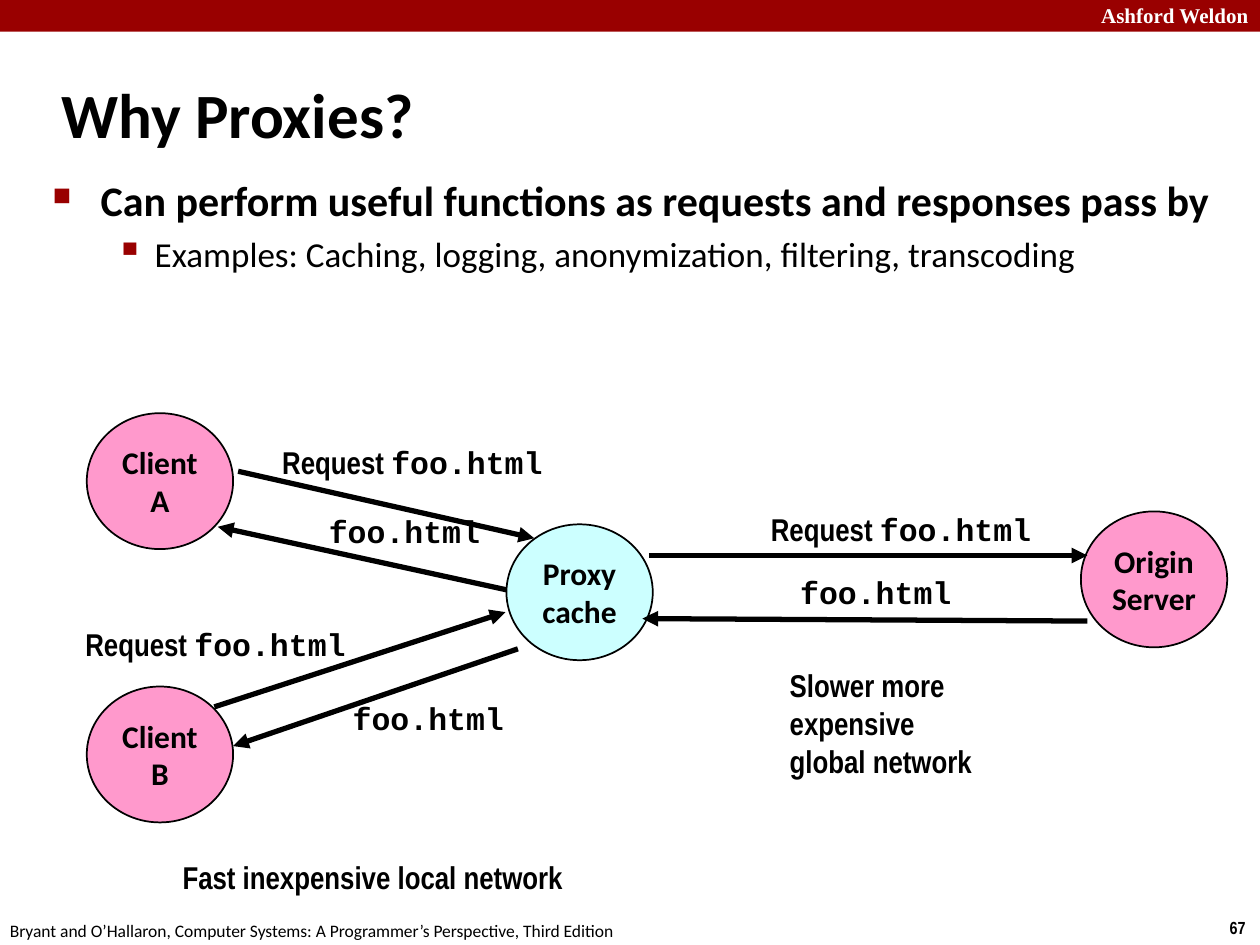
"""Build the slide on what proxies are for."""
from lxml import etree
from pptx import Presentation, util as u
from pptx.dml.color import RGBColor
from pptx.enum import shapes, text
from pptx.oxml.ns import qn

HUE = {"red": "990000", "pink": "FF99CC", "cyan": "CCFFFF", "ink": "000000", "white": "FFFFFF"}
SANS, SLIM, MONO, SERIF = "Calibri", "Arial Narrow", "Courier New", "Times New Roman"
FILE = ("foo.html", MONO)
ASK = [("Request ", SLIM), FILE]
REPLY = [FILE]

BAR = (0, 0, 25.4, 0.64)
FRAME = [
    ("Ashford Weldon", (21.95, -0.08, 3.63, 0.76), SERIF, 12, True, "white", True),
    ("67", (24.54, 18.36, 0.86, 0.69), SLIM, 10, True, "ink", False),
    ("Bryant and O’Hallaron, Computer Systems: A Programmer’s Perspective, Third Edition",
     (-0.05, 18.42, 12.9, 0.69), SANS, 10, False, "ink", False),
]
TITLE = ("Why Proxies?", (0.99, 1.22, 21.08, 2.11))
BODY = (0.81, 3.4, 23.95, 4.6)
POINTS = [
    ("Can perform useful functions as requests and responses pass by",
     24, True, 0.97, 0.97, "■", 60),
    ("Examples: Caching, logging, anonymization, filtering, transcoding",
     20, False, 2.06, 0.79, "▪", 110),
]
NODE = (2.95, 2.74)
NODES = [
    ("Client\nA", (1.75, 8.33), "pink"),
    ("Proxy\ncache", (10.21, 10.57), "cyan"),
    ("Origin\nServer", (21.79, 10.31), "pink"),
    ("Client\nB", (1.75, 13.84), "pink"),
]
FLOWS = [
    ((4.8, 9.5, 10.77, 10.85), ASK, (5.44, 8.81)),
    ((13.08, 11.2, 21.92, 11.2), ASK, (15.29, 10.16)),
    ((21.92, 12.52, 12.95, 12.47), REPLY, (15.88, 11.43)),
    ((10.21, 11.89, 4.39, 10.62), REPLY, (6.38, 10.19)),
    ((4.32, 14.25, 10.19, 12.34), ASK, (1.47, 12.47)),
    ((10.44, 13.08, 4.7, 15.04), REPLY, (6.86, 13.97)),
]
NOTES = [
    ("Fast inexpensive local network", (3.43, 17.17, 8.28, 1.02)),
    ("Slower more\nexpensive\nglobal network", (15.67, 13.31, 4.7, 2.57)),
]


def cm(vals):
    return [u.Cm(v) for v in vals]


def tint(hue):
    return RGBColor.from_string(HUE[hue])


def style(font, face, size, bold=True, hue="ink"):
    font.name, font.size, font.bold = face, u.Pt(size), bold
    font.color.rgb = tint(hue)


def paint(shape, hue):
    shape.shadow.inherit = False
    shape.fill.solid()
    shape.fill.fore_color.rgb = tint(hue)


def box(slide, area, wrap=False):
    frame = slide.shapes.add_textbox(*cm(area)).text_frame
    frame.word_wrap = wrap
    return frame


def write(frame, words, face, size, bold=True, hue="ink"):
    frame.text = words
    for para in frame.paragraphs:
        style(para.font, face, size, bold, hue)


def bullet(para, left, hang, mark, scale):
    props = para._p.get_or_add_pPr()
    props.set("marL", str(u.Cm(left)))
    props.set("indent", str(-u.Cm(hang)))
    color = etree.SubElement(props, qn("a:buClr"))
    etree.SubElement(color, qn("a:srgbClr"), val=HUE["red"])
    etree.SubElement(props, qn("a:buSzPct"), val=str(scale * 1000))
    etree.SubElement(props, qn("a:buChar"), char=mark)


def list_points(slide):
    frame = box(slide, BODY, True)
    frame.text = "\n".join(point[0] for point in POINTS)
    for para, (_, size, bold, *marks) in zip(frame.paragraphs, POINTS):
        para.space_before = u.Pt(size * 0.2)
        bullet(para, *marks)
        style(para.font, SANS, size, bold)


def node(slide, words, spot, hue):
    disc = slide.shapes.add_shape(shapes.MSO_SHAPE.OVAL, *cm(spot + NODE))
    paint(disc, hue)
    disc.line.color.rgb = tint("ink")
    disc.line.width = u.Pt(1)
    frame = disc.text_frame
    frame.word_wrap = False
    frame.vertical_anchor = text.MSO_ANCHOR.MIDDLE
    write(frame, words, SANS, 18)
    for para in frame.paragraphs:
        para.alignment = text.PP_ALIGN.CENTER


def flow(slide, ends, parts, spot):
    arrow = slide.shapes.add_connector(shapes.MSO_CONNECTOR.STRAIGHT, *cm(ends))
    arrow.line.color.rgb = tint("ink")
    arrow.line.width = u.Pt(3)
    etree.SubElement(arrow.line._get_or_add_ln(), qn("a:tailEnd"), type="triangle")
    etree.SubElement(arrow._element.spPr, qn("a:effectLst"))
    wide = 5.79 if parts is ASK else 3.58
    para = box(slide, spot + (wide, 1.02)).paragraphs[0]
    for words, face in parts:
        run = para.add_run()
        run.text = words
        style(run.font, face, 18)


def main():
    deck = Presentation()
    deck.slide_width, deck.slide_height = cm((25.4, 19.05))
    slide = deck.slides.add_slide(deck.slide_layouts[6])
    bar = slide.shapes.add_shape(shapes.MSO_SHAPE.RECTANGLE, *cm(BAR))
    paint(bar, "red")
    bar.line.fill.background()
    for words, area, face, size, bold, hue, wrap in FRAME:
        write(box(slide, area, wrap), words, face, size, bold, hue)
    head = box(slide, TITLE[1], True)
    head.vertical_anchor = text.MSO_ANCHOR.MIDDLE
    write(head, TITLE[0], SANS, 36)
    list_points(slide)
    for item in NODES:
        node(slide, *item)
    for item in FLOWS:
        flow(slide, *item)
    for words, area in NOTES:
        write(box(slide, area), words, SLIM, 18)
    deck.save("out.pptx")


if __name__ == "__main__":
    main()
